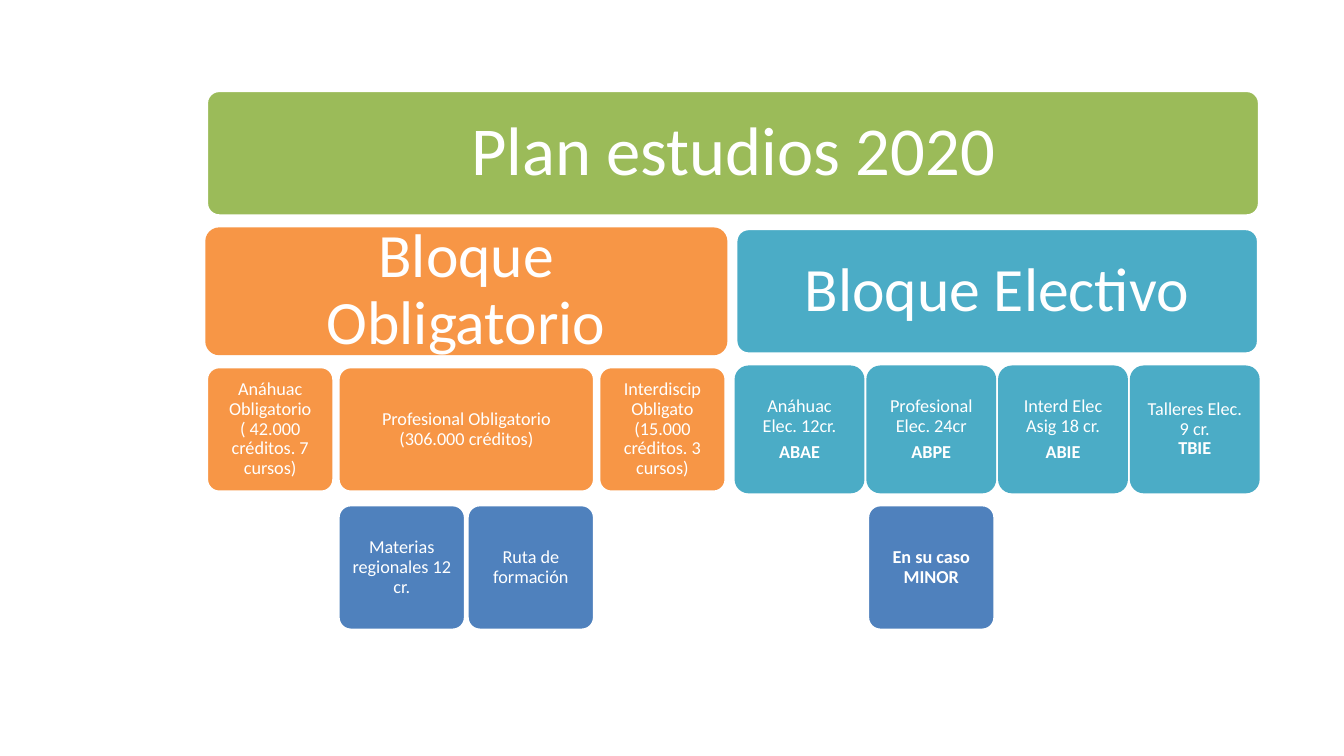
from dataclasses import dataclass
from pptx import Presentation
from pptx.dml.color import RGBColor
from pptx.enum.shapes import MSO_SHAPE
from pptx.enum.text import MSO_ANCHOR, MSO_AUTO_SIZE, PP_ALIGN
from pptx.util import Inches, Pt


@dataclass(frozen=True)
class Theme:
    font: str = "Calibri"
    white: str = "FFFFFF"
    green: str = "9BBB59"
    orange: str = "F79646"
    teal: str = "4BACC6"
    blue: str = "4F81BD"
    title: int = 49
    block: int = 44
    course: int = 13


@dataclass(frozen=True)
class Box:
    x: float
    y: float
    w: float
    h: float


THEME = Theme()
ROW_PITCH = 1.37
COURSE_W = 1.26

REQUIRED = [
    (COURSE_W, "Anáhuac Obligatorio ( 42.000 créditos. 7 cursos)"),
    (2.54, "Profesional Obligatorio (306.000 créditos)"),
    (COURSE_W, "Interdiscip Obligato (15.000 créditos. 3 cursos)"),
]
PROFESSIONAL = ["Materias regionales 12 cr.", "Ruta de formación"]
ELECTIVES = [
    ("Anáhuac Elec. 12cr.", "ABAE", False),
    ("Profesional Elec. 24cr", "ABPE", False),
    ("Interd Elec Asig 18 cr.", "ABIE", False),
    ("Talleres Elec. 9 cr.", "TBIE", True),
]


def set_attrs(obj, values):
    for name, value in values.items():
        setattr(obj, name, value)


def place(sp, box):
    set_attrs(sp, {"left": Inches(box.x), "top": Inches(box.y),
                   "width": Inches(box.w), "height": Inches(box.h)})


def below(box):
    return Box(box.x, box.y + ROW_PITCH, box.w, box.h)


def spread(box, widths):
    gap = (box.w - sum(widths)) / (len(widths) - 1)
    x = box.x
    for w in widths:
        yield Box(x, box.y, w, box.h)
        x += w + gap


def setup_frame(tf, inset):
    set_attrs(tf, {"word_wrap": True, "auto_size": MSO_AUTO_SIZE.NONE,
                   "vertical_anchor": MSO_ANCHOR.MIDDLE,
                   "margin_left": Inches(inset), "margin_right": Inches(inset),
                   "margin_top": Inches(inset), "margin_bottom": Inches(inset)})


def setup_paragraph(p, size):
    set_attrs(p, {"alignment": PP_ALIGN.CENTER, "line_spacing": 0.9,
                  "space_before": Pt(0), "space_after": Pt(size * 0.35)})


def add_run(p, text, size, bold=False):
    r = p.add_run()
    r.text = text
    set_attrs(r.font, {"name": THEME.font, "size": Pt(size), "bold": bold})
    r.font.color.rgb = RGBColor.from_string(THEME.white)


def add_card(s, box, fill, line=THEME.white):
    sp = s.shapes.add_shape(MSO_SHAPE.ROUNDED_RECTANGLE, Inches(box.x),
                            Inches(box.y), Inches(box.w), Inches(box.h))
    sp.adjustments[0] = 0.1
    sp.shadow.inherit = False
    sp.fill.solid()
    sp.fill.fore_color.rgb = RGBColor.from_string(fill)
    sp.line.color.rgb = RGBColor.from_string(line)
    sp.line.width = Pt(2)
    return sp


def add_label(sp, text, size, inset, bold=False):
    setup_frame(sp.text_frame, inset)
    p = sp.text_frame.paragraphs[0]
    setup_paragraph(p, size)
    add_run(p, text, size, bold)
    return p


def add_course(s, box, text, fill, line=THEME.white, bold=False):
    sp = add_card(s, box, fill, line)
    return sp, add_label(sp, text, THEME.course, 0.09, bold)


def add_title(s, box):
    bar = add_card(s, box, THEME.green)
    title = s.shapes.title
    title.element.addprevious(bar.element)
    place(title, box)
    add_label(title, "Plan estudios 2020", THEME.title, 0.24)


def add_required_block(s, box):
    head = add_card(s, box, THEME.orange, THEME.orange)
    add_label(head, "Bloque Obligatorio", THEME.block, 0.22)
    cells = list(spread(below(box), [w for w, _ in REQUIRED]))
    for cell, (_, text) in zip(cells, REQUIRED):
        add_course(s, cell, text, THEME.orange)
    children = spread(below(cells[1]), [COURSE_W] * len(PROFESSIONAL))
    for cell, text in zip(children, PROFESSIONAL):
        add_course(s, cell, text, THEME.blue)


def add_elective_block(s, box):
    head = add_card(s, box, THEME.teal)
    add_label(head, "Bloque Electivo", THEME.block, 0.22)
    cells = list(spread(below(box), [COURSE_W] * len(ELECTIVES)))
    for cell, (text, code, same_paragraph) in zip(cells, ELECTIVES):
        sp, p = add_course(s, cell, text, THEME.teal, THEME.teal)
        if same_paragraph:
            p.add_line_break()
        else:
            p = sp.text_frame.add_paragraph()
            setup_paragraph(p, THEME.course)
        add_run(p, code, THEME.course, True)
    add_course(s, below(cells[1]), "En su caso MINOR", THEME.blue, bold=True)


def main():
    prs = Presentation()
    set_attrs(prs, {"slide_width": Inches(13.33), "slide_height": Inches(7.5)})
    s = prs.slides.add_slide(prs.slide_layouts[5])
    plan = Box(2.05, 0.9, 10.44, 1.24)
    row = below(plan)
    add_title(s, plan)
    add_required_block(s, Box(row.x, row.y, 5.15, row.h))
    add_elective_block(s, Box(7.3, row.y, 5.18, row.h))
    prs.save("out.pptx")


if __name__ == "__main__":
    main()
